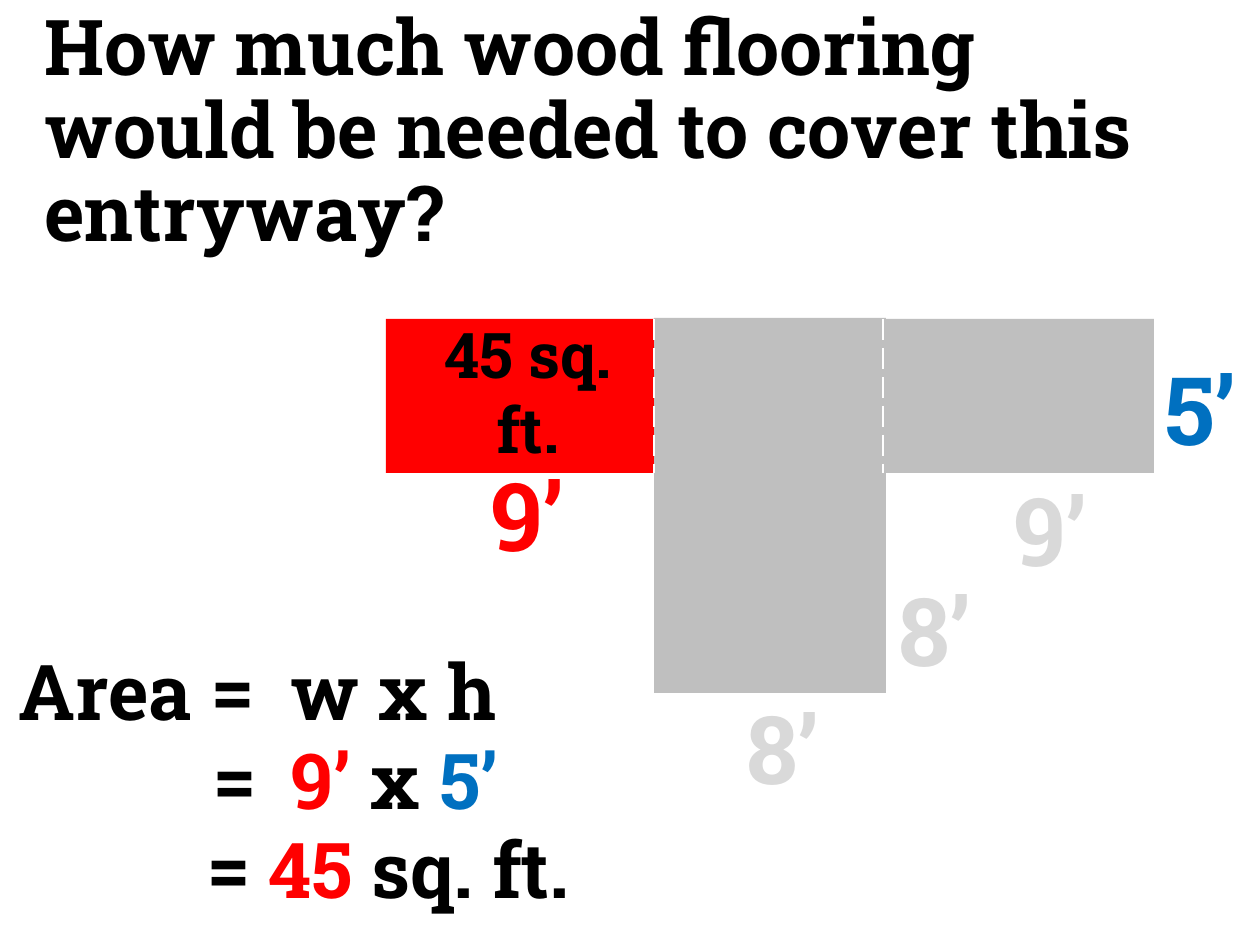
from pptx import Presentation
from pptx.dml.color import RGBColor
from pptx.enum.dml import MSO_LINE
from pptx.enum.shapes import MSO_CONNECTOR, MSO_SHAPE
from pptx.enum.text import PP_ALIGN
from pptx.oxml.ns import qn
from pptx.util import Emu, Pt
from lxml.etree import SubElement

PX = 7257.14  # EMU in one px, 126 px to the inch
FONT = "Roboto Slab"
BLACK = RGBColor(0, 0, 0)
WHITE = RGBColor(255, 255, 255)
RED = RGBColor(255, 0, 0)
BLUE = RGBColor(0, 0x70, 0xC0)
GREY = RGBColor(0xBF, 0xBF, 0xBF)
PALE = RGBColor(0xD9, 0xD9, 0xD9)

TITLE = "How much wood flooring would be needed to cover this entryway?"

# Floor plan: two wings beside a hall
LEFT, TOP, WING, DEEP = 386, 319, 268, 154
HALL, LONG = 232, 375
MID = LEFT + WING
RIGHT = MID + HALL
ROOMS = [
    (LEFT, TOP, WING, DEEP, RED),
    (RIGHT, TOP, WING, DEEP, GREY),
    (MID, TOP - 1, HALL, LONG, GREY),
]
SEAMS = [MID, RIGHT - 3]

# text, left, top, width, colour
SIDES = [
    ("8’", 877, 566, 116, PALE),
    ("9’", 980, 466, 141, PALE),
    ("9’", 457, 451, 141, RED),
    ("5’", 1130, 345, 141, BLUE),
    ("8’", 725, 684, 116, PALE),
]

# left, width, tab stops, runs
STEPS = [
    (19, 515, [272], [("Area =\tw x h", BLACK)]),
    (11, 562, [202, 280],
     [("\t=\t", BLACK), ("9’ ", RED), ("x ", BLACK), ("5’", BLUE)]),
    (19, 597, [188], [("\t= ", BLACK), ("45", RED), (" sq. ft.", BLACK)]),
]
STEP_TOP, STEP_GAP, STEP_H = 644, 89, 93


def px(*vals):
    return [Emu(round(v * PX)) for v in vals]


def write(slide, box, runs, size, align=PP_ALIGN.LEFT, tabs=(), inset=True):
    frame = slide.shapes.add_textbox(*px(*box)).text_frame
    frame.word_wrap = True
    if not inset:
        for side in ("left", "top", "right", "bottom"):
            setattr(frame, f"margin_{side}", 0)
    para = frame.paragraphs[0]
    para.alignment = align
    if tabs:
        stops = SubElement(para._p.get_or_add_pPr(), qn("a:tabLst"))
        for pos in px(*tabs):
            SubElement(stops, qn("a:tab"), pos=str(pos), algn="l")
    for text, tint in runs:
        run = para.add_run()
        run.text = text
        look = {"name": FONT, "size": Pt(size), "bold": True}
        for key, val in look.items():
            setattr(run.font, key, val)
        run.font.color.rgb = tint
    return para


def draw_plan(slide):
    for *box, tint in ROOMS:
        room = slide.shapes.add_shape(MSO_SHAPE.RECTANGLE, *px(*box))
        room.shadow.inherit = False
        room.fill.solid()
        room.fill.fore_color.rgb = tint
        room.line.fill.background()
    for x in SEAMS:
        seam = slide.shapes.add_connector(
            MSO_CONNECTOR.STRAIGHT, *px(x, TOP, x, TOP + DEEP))
        seam.line.color.rgb = WHITE
        seam.line.width = Pt(1.5)
        seam.line.dash_style = MSO_LINE.LONG_DASH
        SubElement(seam._element.spPr, qn("a:effectLst"))
    for text, x, y, w, tint in SIDES:
        write(slide, (x, y, w, 127), [(text, tint)], 54, PP_ALIGN.CENTER)
    write(slide, (411, 309, 234, 165), [("45 sq. ft.", BLACK)], 36,
          PP_ALIGN.CENTER)


def main():
    deck = Presentation()
    deck.slide_width, deck.slide_height = px(1260, 945)
    slide = deck.slides.add_slide(deck.slide_layouts[6])
    for i, (x, w, tabs, runs) in enumerate(STEPS):
        box = (x, STEP_TOP + i * STEP_GAP, w, STEP_H)
        write(slide, box, runs, 44, tabs=tabs, inset=False)
    draw_plan(slide)
    title = write(slide, (32, 3, 1155, 91), [(TITLE, BLACK)], 44)
    title.line_spacing = 0.9
    deck.save("out.pptx")


if __name__ == "__main__":
    main()
